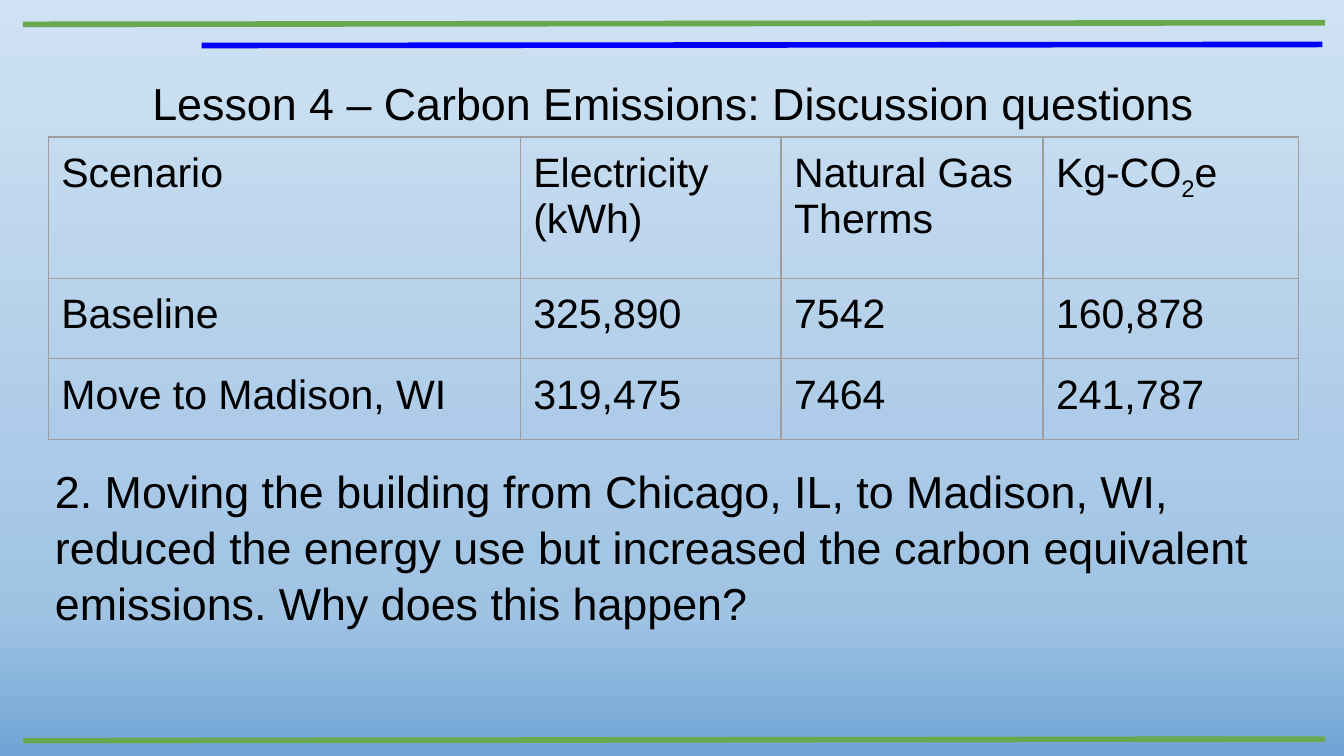
"""Build the carbon emissions discussion slide."""
from copy import deepcopy

from lxml import etree
from pptx import Presentation
from pptx.dml.color import RGBColor
from pptx.enum.shapes import MSO_CONNECTOR
from pptx.enum.text import MSO_ANCHOR, MSO_AUTO_SIZE, PP_ALIGN
from pptx.oxml.ns import qn
from pptx.util import Cm, Pt

STRAIGHT = MSO_CONNECTOR.STRAIGHT
TOP, BOTTOM = MSO_ANCHOR.TOP, MSO_ANCHOR.BOTTOM
LEFT, CENTER = PP_ALIGN.LEFT, PP_ALIGN.CENTER
NO_AUTOFIT = MSO_AUTO_SIZE.NONE


class Theme:
    """Colours and type sizes of the slide."""
    font = "Arial"
    text = RGBColor.from_string("000000")
    green = RGBColor.from_string("6AA84F")
    blue = RGBColor.from_string("0000FF")
    border = "9E9E9E"
    background = [(0, "CFE2F3"), (0.81, "A0C3E4"), (1, "70A4D5")]
    heading_size = Pt(24)
    table_size = Pt(22)
    rule_width = Pt(3)
    border_width = Pt(0.75)


def set_format(target, values):
    """Set every attribute named in values on the target."""
    for name, value in values.items():
        setattr(target, name, value)


def format_text(frame, size, alignment=LEFT, spacing=1.0):
    """Apply the slide's type to each paragraph and run of a frame."""
    for paragraph in frame.paragraphs:
        set_format(paragraph, {"alignment": alignment, "line_spacing": spacing,
                               "space_before": Pt(0), "space_after": Pt(0)})
        for run in paragraph.runs:
            set_format(run.font, {"name": Theme.font, "size": size})
            run.font.color.rgb = Theme.text


presentation = Presentation()
set_format(presentation, {"slide_width": Cm(25.4), "slide_height": Cm(14.29)})
slide = presentation.slides.add_slide(presentation.slide_layouts[5])

background = slide.background.fill
background.gradient()
background.gradient_angle = 270
stop_list = slide.element.find(".//" + qn("a:gsLst"))
stop_list.append(deepcopy(stop_list[-1]))
for stop, (position, colour) in zip(background.gradient_stops, Theme.background):
    stop.position = position
    stop.color.rgb = RGBColor.from_string(colour)

rules = [
    (0.43, 0.46, 25.04, 0.43, Theme.green),
    (0.43, 14.0, 25.04, 13.97, Theme.green),
    (3.81, 0.86, 24.99, 0.84, Theme.blue),
]
for left, start, right, end, colour in rules:
    rule = slide.shapes.add_connector(STRAIGHT, Cm(left), Cm(start), Cm(right), Cm(end))
    rule.line.color.rgb = colour
    rule.line.width = Theme.rule_width
    etree.SubElement(rule.element.spPr, qn("a:effectLst"))

margins = {f"margin_{side}": Cm(0.25) for side in ("left", "right", "top", "bottom")}
frame_format = {"word_wrap": True, "auto_size": NO_AUTOFIT,
                "vertical_anchor": BOTTOM, **margins}

title = slide.shapes.title
question = slide.shapes.add_textbox(0, 0, 0, 0)
text_blocks = [
    (title, 0.61, 1.14, 1.55, CENTER, 1.0,
     "Lesson 4 – Carbon Emissions: Discussion questions"),
    (question, 0.79, 8.56, 3.58, LEFT, 1.04,
     "2. Moving the building from Chicago, IL, to Madison, WI, reduced the energy "
     "use but increased the carbon equivalent emissions. Why does this happen?"),
]
for shape, left, top, height, alignment, spacing, text in text_blocks:
    set_format(shape, {"left": Cm(left), "top": Cm(top),
                       "width": Cm(24.21), "height": Cm(height)})
    shape.text_frame.text = text
    set_format(shape.text_frame, frame_format)
    format_text(shape.text_frame, Theme.heading_size, alignment, spacing)

rows = [
    ["Scenario", "Electricity\n(kWh)", "Natural Gas\nTherms", "Kg-CO"],
    ["Baseline", "325,890", "7542", "160,878"],
    ["Move to Madison, WI", "319,475", "7464", "241,787"],
]
column_widths = [8.92, 4.93, 4.95, 4.83]
row_heights = [2.67, 1.52, 1.52]
table = slide.shapes.add_table(
    len(rows), len(column_widths), Cm(0.91), Cm(2.59),
    Cm(sum(column_widths)), Cm(sum(row_heights))).table
set_format(table, {"first_row": False, "horz_banding": False})
for column, width in zip(table.columns, column_widths):
    column.width = Cm(width)
for row, height in zip(table.rows, row_heights):
    row.height = Cm(height)

for row, texts in zip(table.rows, rows):
    for cell, text in zip(row.cells, texts):
        cell.text = text
        set_format(cell, {"vertical_anchor": TOP, **margins})
        cell.fill.background()
        properties = cell._tc.get_or_add_tcPr()
        for index, edge in enumerate(("a:lnL", "a:lnR", "a:lnT", "a:lnB")):
            border = etree.Element(qn(edge), w=str(Theme.border_width))
            fill = etree.SubElement(border, qn("a:solidFill"))
            etree.SubElement(fill, qn("a:srgbClr"), val=Theme.border)
            properties.insert(index, border)

emissions_header = table.cell(0, 3).text_frame.paragraphs[0]
subscript = emissions_header.add_run()
subscript.text = "2"
subscript._r.get_or_add_rPr().set("baseline", "-25000")
emissions_header.add_run().text = "e"
for cell in table.iter_cells():
    format_text(cell.text_frame, Theme.table_size)

presentation.save("out.pptx")
